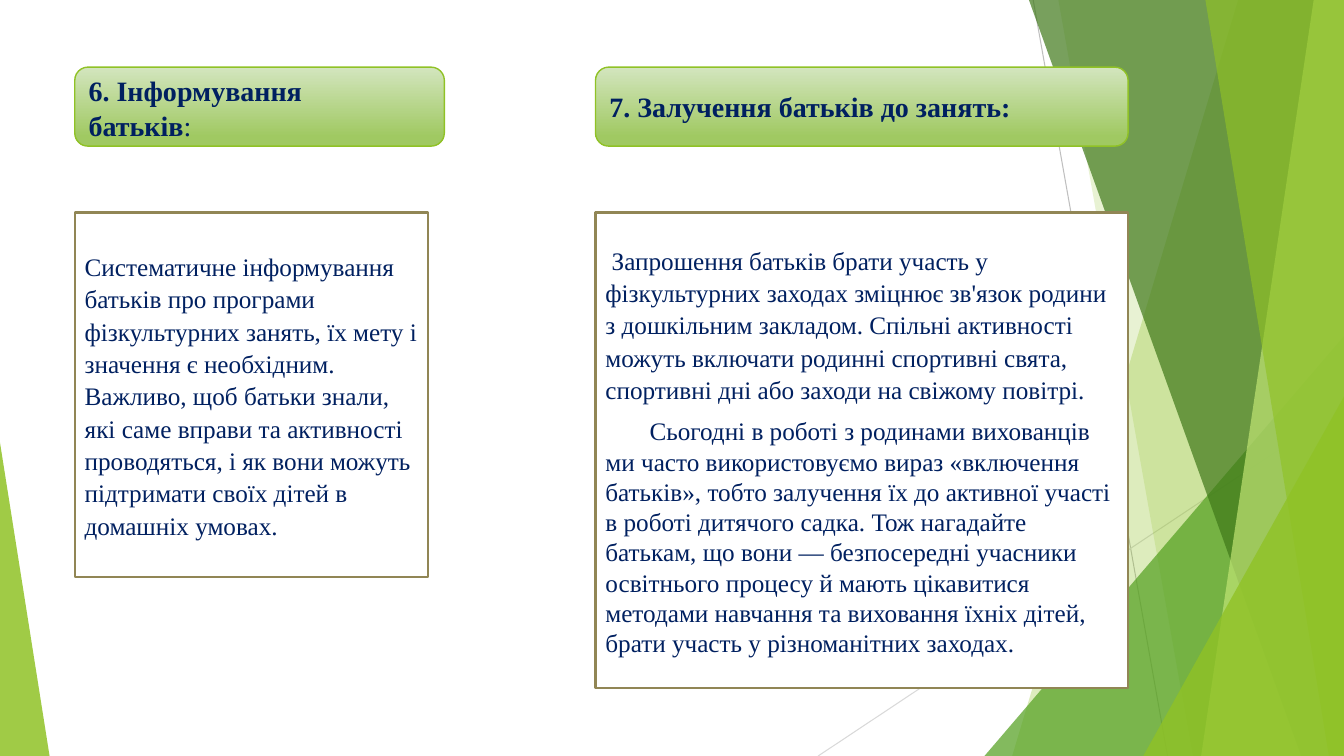
"""Builds a slide with two headed notes on working with parents."""
from dataclasses import dataclass

from lxml.etree import SubElement
from pptx import Presentation
from pptx.dml.color import RGBColor
from pptx.enum.shapes import MSO_CONNECTOR, MSO_SHAPE
from pptx.enum.text import MSO_ANCHOR, PP_ALIGN
from pptx.oxml.ns import qn
from pptx.util import Inches, Pt

COLS, ROWS = 160, 90
CELL = Inches(1) // 12


@dataclass(frozen=True)
class Theme:
    """Colours, font and type sizes of the slide."""
    font: str = "Times New Roman"
    heading: int = 20
    body: int = 18
    ink: str = "002060"
    paper: str = "FFFFFF"
    frame: str = "918655"
    green: str = "90C226"
    mid_green: str = "54A021"
    dark_green: str = "3F7819"
    pale_green: str = "C0E474"
    grad_top: str = "D3E5BE"
    grad_bottom: str = "A0C962"
    line: str = "BFBFBF"
    pale_line: str = "D9D9D9"


@dataclass(frozen=True)
class Ray:
    """A thin line between two grid points."""
    x1: float
    y1: float
    x2: float
    y2: float
    color: str


@dataclass(frozen=True)
class Band:
    """A full-height area from a slanted left edge to the right slide edge."""
    top: float
    bottom: float
    color: str
    alpha: int


@dataclass(frozen=True)
class Wedge:
    """A right triangle standing on the bottom edge."""
    x: float
    y: float
    w: float
    apex: float
    color: str
    alpha: int


@dataclass(frozen=True)
class Para:
    """A paragraph with its first-line indent, spacing and plain tail."""
    text: str
    tail: str = ""
    indent: float = 0
    leading: float = 1.0
    before: float = 0
    after: float = 0


@dataclass(frozen=True)
class Note:
    """A heading and the framed text below it."""
    x: float
    heading_w: float
    body_w: float
    body_h: float
    heading: Para
    paras: tuple[Para, ...]
    heading_inset: float = 1.2


T = Theme()
HEADING_Y, HEADING_H, BODY_Y = 8, 9.4, 25.3

DECOR = (
    Ray(123, 0, 139, 90, T.line),
    Ray(160, 48.4, 97.4, 90, T.pale_line),
    Band(147.4, 120.5, T.green, 30),
    Band(126, 142, T.green, 20),
    Wedge(117.2, 40, 42.8, 1, T.mid_green, 72),
    Band(122.5, 154.9, T.dark_green, 70),
    Band(156.4, 143, T.pale_green, 70),
    Band(143.5, 158.2, T.green, 65),
    Wedge(136.1, 47.2, 23.9, 1, T.green, 80),
    Wedge(0, 52.7, 5.9, 0, T.green, 85),
)

NOTES = (
    Note(8.9, 44, 42.1, 43.4,
         Para("6. Інформування батьків", tail=":", leading=1.07, after=8),
         (Para("Систематичне інформування батьків про програми фізкультурних занять, "
               "їх мету і значення є необхідним. Важливо, щоб батьки знали, які саме "
               "вправи та активності проводяться, і як вони можуть підтримати своїх "
               "дітей в домашніх умовах.", leading=1.07, after=8),),
         heading_inset=6),
    Note(70.9, 63.4, 63.4, 56.6,
         Para("7. Залучення батьків до занять:", before=10),
         (Para("Запрошення батьків брати участь у фізкультурних заходах зміцнює "
               "зв'язок родини з дошкільним закладом. Спільні активності можуть "
               "включати родинні спортивні свята, спортивні дні або заходи на "
               "свіжому повітрі.", indent=0.75, leading=1.07, after=8),
          Para("Сьогодні в роботі з родинами вихованців ми часто використовуємо "
               "вираз «включення батьків», тобто залучення їх до активної участі в "
               "роботі дитячого садка. Тож нагадайте батькам, що вони — "
               "безпосередні учасники освітнього процесу й мають цікавитися "
               "методами навчання та виховання їхніх дітей, брати участь у "
               "різноманітних заходах.", indent=5.25))),
)


def grid(*cells: float) -> list[int]:
    """Turn grid cells into slide lengths."""
    return [round(c * CELL) for c in cells]


def rgb(color: str) -> RGBColor:
    """Turn a hex string into a colour."""
    return RGBColor.from_string(color)


def tint(s, color: str, alpha: int) -> None:
    """Give a shape a see-through fill without outline."""
    s.shadow.inherit = False
    s.fill.solid()
    s.fill.fore_color.rgb = rgb(color)
    clr = s._element.spPr.find(qn("a:solidFill"))[0]
    SubElement(clr, qn("a:alpha")).set("val", str(alpha * 1000))
    s.line.fill.background()


def add_decor(shapes, item: Ray | Band | Wedge) -> None:
    """Draw one piece of the background."""
    match item:
        case Ray():
            s = shapes.add_connector(MSO_CONNECTOR.STRAIGHT,
                                     *grid(item.x1, item.y1, item.x2, item.y2))
            s.line.color.rgb = rgb(item.color)
            s.line.width = Pt(0.75)
            SubElement(s._element.spPr, qn("a:effectLst"))
        case Band():
            ff = shapes.build_freeform(*grid(item.top, 0))
            ff.add_line_segments([grid(COLS, 0), grid(COLS, ROWS),
                                  grid(item.bottom, ROWS)])
            tint(ff.convert_to_shape(), item.color, item.alpha)
        case Wedge():
            s = shapes.add_shape(MSO_SHAPE.ISOSCELES_TRIANGLE,
                                 *grid(item.x, item.y, item.w, ROWS - item.y))
            s.adjustments[0] = item.apex
            tint(s, item.color, item.alpha)


def add_run(p, text: str, *, size: int, bold: bool) -> None:
    """Add formatted text to a paragraph."""
    r = p.add_run()
    r.text = text
    r.font.name, r.font.size, r.font.bold = T.font, Pt(size), bold
    r.font.color.rgb = rgb(T.ink)


def write(s, paras: tuple[Para, ...], *, size: int, bold: bool = False,
          inset: float = 1.2) -> None:
    """Fill a shape with left-aligned, vertically centred paragraphs."""
    tf = s.text_frame
    tf.word_wrap = True
    tf.vertical_anchor = MSO_ANCHOR.MIDDLE
    tf.margin_right = grid(inset)[0]
    for i, para in enumerate(paras):
        p = tf.add_paragraph() if i else tf.paragraphs[0]
        p.alignment = PP_ALIGN.LEFT
        p.line_spacing = para.leading
        p.space_before, p.space_after = Pt(para.before), Pt(para.after)
        p._p.get_or_add_pPr().set("indent", str(grid(para.indent)[0]))
        add_run(p, para.text, size=size, bold=bold)
        if para.tail:
            add_run(p, para.tail, size=size, bold=False)


def add_box(shapes, kind: MSO_SHAPE, box: list[int], line: str, width: float):
    """Add an outlined shape without shadow."""
    s = shapes.add_shape(kind, *box)
    s.shadow.inherit = False
    s.line.color.rgb = rgb(line)
    s.line.width = Pt(width)
    return s


def add_note(shapes, note: Note) -> None:
    """Draw a heading and its framed text."""
    s = add_box(shapes, MSO_SHAPE.ROUNDED_RECTANGLE,
                grid(note.x, HEADING_Y, note.heading_w, HEADING_H), T.green, 1)
    s.fill.gradient()
    s.fill.gradient_angle = 270
    for stop, (pos, color) in zip(s.fill.gradient_stops,
                                  ((0, T.grad_top), (0.88, T.grad_bottom))):
        stop.position, stop.color.rgb = pos, rgb(color)
    write(s, (note.heading,), size=T.heading, bold=True, inset=note.heading_inset)

    s = add_box(shapes, MSO_SHAPE.RECTANGLE,
                grid(note.x, BODY_Y, note.body_w, note.body_h), T.frame, 1.5)
    s.fill.solid()
    s.fill.fore_color.rgb = rgb(T.paper)
    write(s, note.paras, size=T.body)


def main() -> None:
    """Build and save the slide."""
    prs = Presentation()
    prs.slide_width, prs.slide_height = grid(COLS, ROWS)
    shapes = prs.slides.add_slide(prs.slide_layouts[6]).shapes
    for item in DECOR:
        add_decor(shapes, item)
    for note in NOTES:
        add_note(shapes, note)
    prs.save("out.pptx")


if __name__ == "__main__":
    main()
